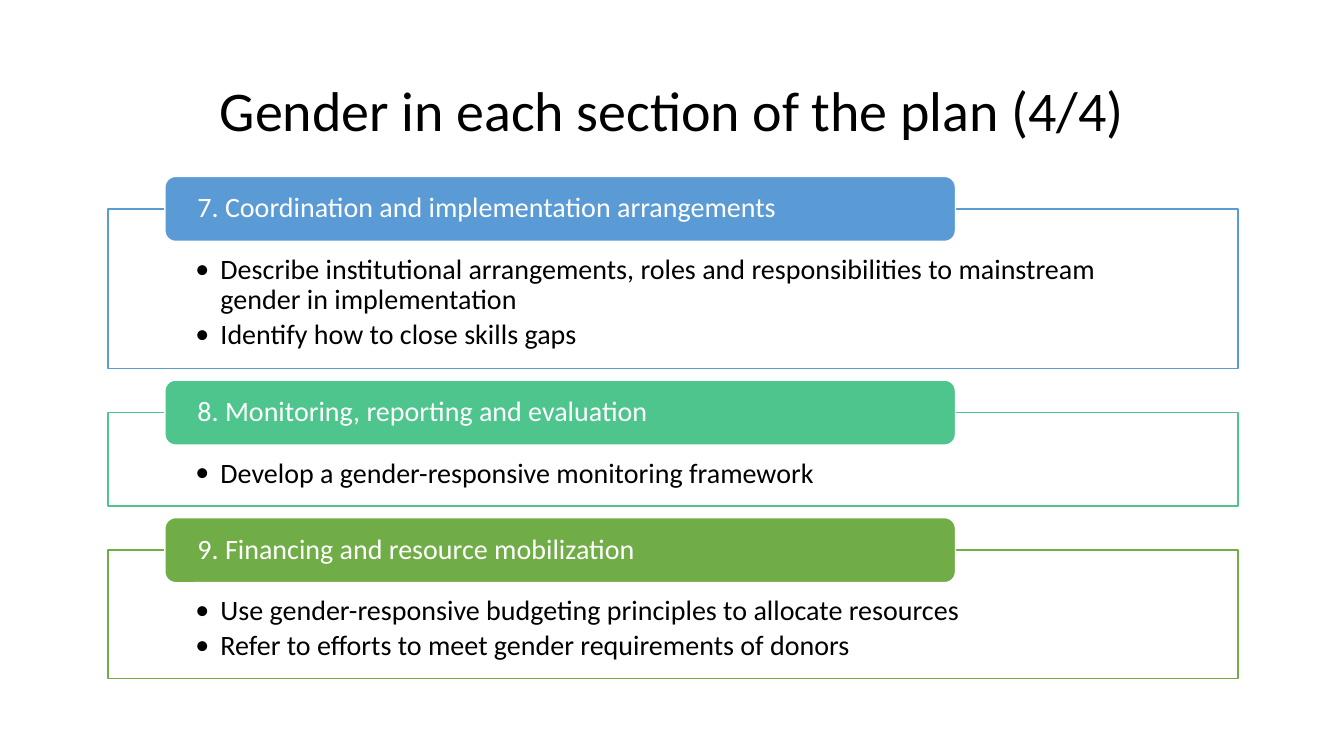
from typing import NamedTuple

from lxml import etree
from pptx import Presentation
from pptx import util as u
from pptx.dml.color import RGBColor
from pptx.enum import shapes, text
from pptx.oxml import ns

SCALE = 9525  # EMU per px, 96 px to the inch
FONT = "Calibri"
BLACK = RGBColor(0x00, 0x00, 0x00)
WHITE = RGBColor(0xFF, 0xFF, 0xFF)
BLUE = RGBColor(0x5B, 0x9B, 0xD5)
MINT = RGBColor(0x4D, 0xC5, 0x8D)
GREEN = RGBColor(0x70, 0xAD, 0x47)

TOP, GAP = 168, 11
TAB_H, DROP = 62, 31  # tab height, and how far the panel starts below its top
HANG = 24  # bullet indent


class Box(NamedTuple):
    x: int
    y: int
    w: int
    h: int


class Part(NamedTuple):
    head: str
    points: list[str]
    color: RGBColor
    height: int


PARTS = [
    Part("7. Coordination and implementation arrangements",
         ["Describe institutional arrangements, roles and responsibilities "
          "to mainstream gender in implementation",
          "Identify how to close skills gaps"], BLUE, 152),
    Part("8. Monitoring, reporting and evaluation",
         ["Develop a gender-responsive monitoring framework"], MINT, 89),
    Part("9. Financing and resource mobilization",
         ["Use gender-responsive budgeting principles to allocate resources",
          "Refer to efforts to meet gender requirements of donors"], GREEN, 122),
]


def px(n: int) -> u.Emu:
    return u.Emu(n * SCALE)


def place(shape, box: Box) -> None:
    shape.left, shape.top, shape.width, shape.height = map(px, box)


def style(frame, size: int, color: RGBColor, align) -> None:
    for para in frame.paragraphs:
        para.alignment = align
        para.line_spacing = 0.9
        for run in para.runs:
            run.font.name = FONT
            run.font.size = u.Pt(size)
            run.font.color.rgb = color


def add_box(slide, kind, box: Box, fill: RGBColor, line: RGBColor):
    shape = slide.shapes.add_shape(kind, *map(px, box))
    shape.shadow.inherit = False
    shape.fill.solid()
    shape.fill.fore_color.rgb = fill
    shape.line.color.rgb = line
    shape.line.width = u.Pt(1)
    return shape


def fill_text(shape, words: str, color: RGBColor, anchor,
              side: int, top: int = 0, base: int = 0) -> None:
    frame = shape.text_frame
    frame.text = words
    frame.word_wrap = True
    frame.vertical_anchor = anchor
    frame.margin_left = frame.margin_right = px(side)
    frame.margin_top, frame.margin_bottom = px(top), px(base)
    style(frame, 20, color, text.PP_ALIGN.LEFT)


def add_panel(slide, part: Part, y: int) -> None:
    panel = add_box(slide, shapes.MSO_SHAPE.RECTANGLE,
                    Box(103, y, 1076, part.height), WHITE, part.color)
    tint = panel.fill._xPr.find(".//" + ns.qn("a:srgbClr"))
    etree.SubElement(tint, ns.qn("a:alpha"), val="90000")
    fill_text(panel, "\n".join(part.points), BLACK,
              text.MSO_ANCHOR.TOP, 83, 44, 8)
    # Bullets with a hanging indent
    for para in panel.text_frame.paragraphs:
        para.space_after = u.Pt(3.5)
        props = para._p.get_or_add_pPr()
        props.set("marL", str(px(HANG)))
        props.set("indent", str(px(-HANG)))
        etree.SubElement(props, ns.qn("a:buFont"), typeface=FONT)
        etree.SubElement(props, ns.qn("a:buChar"), char="•")


def add_tab(slide, part: Part, y: int) -> None:
    tab = add_box(slide, shapes.MSO_SHAPE.ROUNDED_RECTANGLE,
                  Box(157, y, 753, TAB_H), part.color, WHITE)
    fill_text(tab, part.head, WHITE, text.MSO_ANCHOR.MIDDLE, 28)


def main() -> None:
    deck = Presentation()
    deck.slide_width, deck.slide_height = px(1280), px(720)
    slide = deck.slides.add_slide(deck.slide_layouts.get_by_name("Title Only"))

    # Title
    title = slide.shapes.title
    place(title, Box(88, 38, 1104, 139))
    title.text_frame.text = "Gender in each section of the plan (4/4)"
    title.text_frame.vertical_anchor = text.MSO_ANCHOR.MIDDLE
    style(title.text_frame, 40, BLACK, text.PP_ALIGN.CENTER)

    # Stacked sections, each a panel with a tab over its top edge
    y = TOP
    for part in PARTS:
        add_panel(slide, part, y + DROP)
        add_tab(slide, part, y)
        y += DROP + part.height + GAP

    deck.save("out.pptx")


if __name__ == "__main__":
    main()
